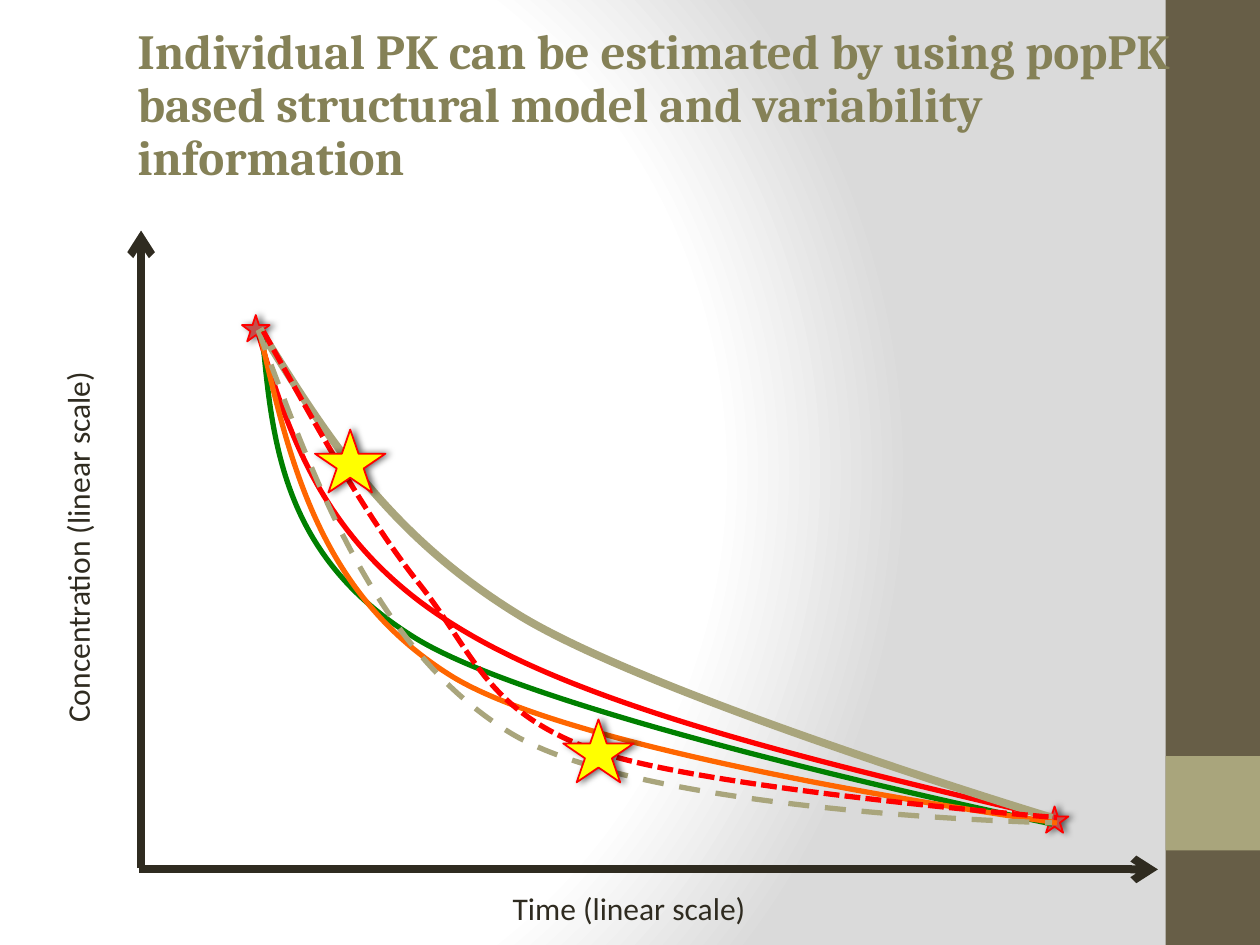
from dataclasses import dataclass

from lxml import etree
from pptx import Presentation
from pptx.dml.color import RGBColor
from pptx.enum.dml import MSO_LINE
from pptx.enum.shapes import MSO_CONNECTOR, MSO_SHAPE
from pptx.enum.text import MSO_ANCHOR, MSO_AUTO_SIZE, PP_ALIGN
from pptx.oxml import parse_xml
from pptx.oxml.ns import nsdecls, qn
from pptx.util import Inches, Pt

RECTANGLE, STAR = MSO_SHAPE.RECTANGLE, MSO_SHAPE.STAR_5_POINT
STRAIGHT = MSO_CONNECTOR.STRAIGHT
DASH, SHORT_DASH = MSO_LINE.DASH, MSO_LINE.SQUARE_DOT
WIDTH, HEIGHT = 10, 7.5
TITLE_ONLY = 5


@dataclass(frozen=True)
class Theme:
    title: str = "858157"
    ink: str = "2F2B20"
    bar: str = "675E47"
    sand: str = "A9A57C"
    red: str = "FF0000"
    green: str = "008000"
    orange: str = "FF6600"
    brick: str = "C0504D"
    yellow: str = "FFFF00"
    white: str = "FFFFFF"
    grey: str = "DADADA"
    title_font: str = "Cambria"
    label_font: str = "Calibri"
    title_size: float = 28
    label_size: float = 18


THEME = Theme()

# Curves: colour, width, dash, then the start and the Bezier points in inches
CURVES = [
    (THEME.red, 3, None, [(2.03, 2.58), (2.29, 3.45), (2.56, 4.32), (3.62, 4.97),
                          (4.68, 5.63), (6.54, 6.06), (8.4, 6.5)]),
    (THEME.sand, 4.5, None, [(2.06, 2.61), (2.56, 3.41), (3.05, 4.22), (4.1, 4.87),
                             (5.14, 5.52), (8.35, 6.49), (8.35, 6.49)]),
    (THEME.green, 3, None, [(2.08, 2.63), (2.16, 3.52), (2.24, 4.41), (3.29, 5.06),
                            (4.33, 5.71), (8.35, 6.54), (8.35, 6.54)]),
    (THEME.orange, 3, None, [(2.06, 2.63), (2.3, 3.68), (2.54, 4.72), (3.59, 5.37),
                             (4.65, 6.02), (8.39, 6.53), (8.39, 6.53)]),
    (THEME.sand, 3, DASH, [(2.05, 2.62), (2.52, 3.89), (2.99, 5.16), (4.04, 5.81),
                           (5.09, 6.46), (8.35, 6.53), (8.35, 6.53)]),
    (THEME.red, 3, SHORT_DASH, [(2.09, 2.63), (2.5, 3.36), (2.9, 4.1), (3.34, 4.65),
                                (3.77, 5.2), (3.86, 5.64), (4.7, 5.95),
                                (5.54, 6.26), (8.39, 6.49), (8.39, 6.49)]),
]
END_STARS = [(1.92, 2.5), (8.26, 6.4)]
SAMPLE_STARS = [(2.5, 3.41), (4.47, 5.71)]


def rgb(color):
    return RGBColor.from_string(color)


def set_font(paragraph, name, size, color, bold=False):
    font = paragraph.font
    font.name, font.size, font.bold = name, Pt(size), bold
    font.color.rgb = rgb(color)


def set_line(shape, color, width):
    shape.line.color.rgb = rgb(color)
    shape.line.width = Pt(width)


def set_background(slide):
    stops = "".join(
        f'<a:gs pos="{share * 1000}"><a:srgbClr val="{color}"/></a:gs>'
        for share, color in [(0, THEME.white), (75, THEME.white), (100, THEME.grey)])
    slide.element.cSld.insert(0, parse_xml(
        f'<p:bg {nsdecls("p", "a")}><p:bgPr><a:gradFill rotWithShape="1">'
        f'<a:gsLst>{stops}</a:gsLst><a:path path="circle">'
        '<a:fillToRect l="20000" t="50000" r="100000" b="50000"/></a:path>'
        '</a:gradFill><a:effectLst/></p:bgPr></p:bg>'))


def add_block(slide, left, top, width, height, color):
    block = slide.shapes.add_shape(
        RECTANGLE, Inches(left), Inches(top), Inches(width), Inches(height))
    block.shadow.inherit = False
    block.fill.solid()
    block.fill.fore_color.rgb = rgb(color)
    block.line.fill.background()


def add_axis(slide, start, end):
    axis = slide.shapes.add_connector(STRAIGHT, *map(Inches, start + end))
    set_line(axis, THEME.ink, 4.5)
    etree.SubElement(axis.line._get_or_add_ln(), qn("a:tailEnd"), type="arrow")
    etree.SubElement(axis._element.spPr, qn("a:effectLst"))


def add_curve(slide, color, width, dash, points):
    start, *rest = [(Inches(x), Inches(y)) for x, y in points]
    builder = slide.shapes.build_freeform(*start)
    builder.add_line_segments(rest, close=False)
    curve = builder.convert_to_shape()
    # Every three points become one Bezier segment
    path = curve._element.spPr.find(".//" + qn("a:path"))
    segments = path.findall(qn("a:lnTo"))
    for index in range(0, len(segments), 3):
        bezier = etree.SubElement(path, qn("a:cubicBezTo"))
        for segment in segments[index:index + 3]:
            bezier.append(segment[0])
            path.remove(segment)
    curve.shadow.inherit = False
    curve.fill.background()
    set_line(curve, color, width)
    if dash is not None:
        curve.line.dash_style = dash


def add_star(slide, position, size, color):
    star = slide.shapes.add_shape(STAR, *map(Inches, position + size))
    star.fill.solid()
    star.fill.fore_color.rgb = rgb(color)
    set_line(star, THEME.red, 1)
    star.shadow.inherit = False
    star._element.spPr.find(qn("a:effectLst")).append(parse_xml(
        f'<a:outerShdw {nsdecls("a")} blurRad="{Pt(4)}" dist="{Pt(2)}" dir="0" '
        'rotWithShape="0"><a:srgbClr val="000000"><a:alpha val="60000"/>'
        '</a:srgbClr></a:outerShdw>'))


def add_label(slide, text, left, top, width, rotation=0):
    label = slide.shapes.add_textbox(
        Inches(left), Inches(top), Inches(width), Inches(0.4))
    label.rotation = rotation
    frame = label.text_frame
    frame.word_wrap = False
    frame.auto_size = MSO_AUTO_SIZE.SHAPE_TO_FIT_TEXT
    frame.text = text
    set_font(frame.paragraphs[0], THEME.label_font, THEME.label_size, THEME.ink)


def set_title(slide, text):
    title = slide.shapes.title
    title.left, title.top = Inches(0.99), Inches(0.78)
    title.width, title.height = Inches(8.57), Inches(0.75)
    frame = title.text_frame
    frame.text = text
    frame.word_wrap = True
    frame.auto_size = MSO_AUTO_SIZE.NONE
    frame.vertical_anchor = MSO_ANCHOR.BOTTOM
    paragraph = frame.paragraphs[0]
    paragraph.alignment = PP_ALIGN.LEFT
    paragraph.line_spacing = 0.9
    set_font(paragraph, THEME.title_font, THEME.title_size, THEME.title, bold=True)
    # The title lies over the side bar
    slide.shapes._spTree.append(title._element)


def main():
    presentation = Presentation()
    presentation.slide_width, presentation.slide_height = Inches(WIDTH), Inches(HEIGHT)
    slide = presentation.slides.add_slide(presentation.slide_layouts[TITLE_ONLY])
    set_background(slide)

    # Side bar with its accent square
    bar = 0.75
    add_block(slide, WIDTH - bar, 0, bar, HEIGHT, THEME.bar)
    add_block(slide, WIDTH - bar, HEIGHT - 2 * bar, bar, bar, THEME.sand)

    # Axes, curves and sampling points
    add_axis(slide, (1.1, 6.9), (9.19, 6.9))
    add_axis(slide, (1.12, 6.89), (1.12, 1.83))
    add_curve(slide, *CURVES[0])
    for position in END_STARS:
        add_star(slide, position, (0.22, 0.21), THEME.brick)
    for curve in CURVES[1:]:
        add_curve(slide, *curve)
    for position in SAMPLE_STARS:
        add_star(slide, position, (0.56, 0.5), THEME.yellow)

    # Title and axis labels
    set_title(slide, "Individual PK can be estimated by using popPK based "
                     "structural model and variability information")
    add_label(slide, "Time (linear scale)", 3.97, 7.01, 2.07)
    add_label(slide, "Concentration (linear scale)", -0.9, 4.12, 3.03, rotation=270)
    presentation.save("out.pptx")


if __name__ == "__main__":
    main()
